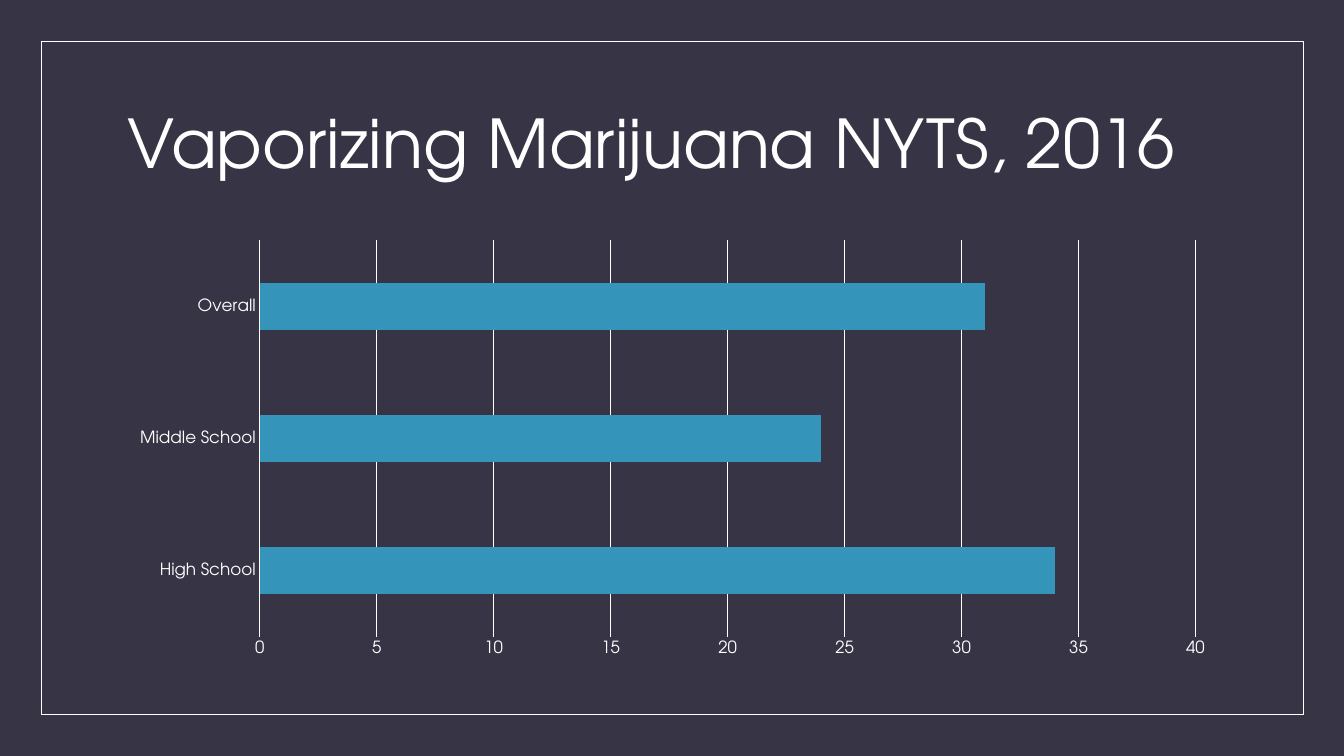
from pptx import Presentation
from pptx.chart import data
from pptx.dml import color
from pptx.enum import chart as chart_enum, shapes, text
from pptx.util import Inches, Pt

FONT = "TeX Gyre Adventor"
WHITE, BACKGROUND, BAR = "FFFFFF", "373545", "3494BA"


def rgb(value):
    return color.RGBColor.from_string(value)


def style_font(font, size):
    font.name = FONT
    font.size = Pt(size)
    font.bold = False
    font.color.rgb = rgb(WHITE)


def style_line(line, width):
    line.color.rgb = rgb(WHITE)
    line.width = Pt(width)


def add_frame(slide, left, top, width, height):
    frame = slide.shapes.add_shape(shapes.MSO_SHAPE.RECTANGLE, left, top, width, height)
    frame.shadow.inherit = False
    frame.fill.background()
    style_line(frame.line, 0.5)


def add_title(slide, left, top, width, height):
    text_frame = slide.shapes.add_textbox(left, top, width, height).text_frame
    text_frame.word_wrap = True
    text_frame.vertical_anchor = text.MSO_ANCHOR.MIDDLE
    paragraph = text_frame.paragraphs[0]
    paragraph.line_spacing = 0.9
    run = paragraph.add_run()
    run.text = "Vaporizing Marijuana NYTS, 2016"
    style_font(run.font, 48)


def add_bar_chart(slide, left, top, width, height):
    chart_data = data.CategoryChartData()
    chart_data.categories = ["High School", "Middle School", "Overall"]
    chart_data.add_series("Series 1", [34, 24, 31])
    chart = slide.shapes.add_chart(
        chart_enum.XL_CHART_TYPE.BAR_CLUSTERED, left, top, width, height, chart_data
    ).chart
    chart.has_legend = False
    chart.has_title = False
    style_font(chart.font, 10)

    # Bars
    plot = chart.plots[0]
    plot.gap_width = 182
    plot.vary_by_categories = False
    fill = plot.series[0].format.fill
    fill.solid()
    fill.fore_color.rgb = rgb(BAR)

    # Axes
    for axis in (chart.category_axis, chart.value_axis):
        axis.major_tick_mark = chart_enum.XL_TICK_MARK.NONE
        axis.minor_tick_mark = chart_enum.XL_TICK_MARK.NONE
        style_font(axis.tick_labels.font, 12)
    style_line(chart.category_axis.format.line, 0.75)
    values = chart.value_axis
    values.minimum_scale, values.maximum_scale, values.major_unit = 0, 40, 5
    values.format.line.fill.background()
    values.has_major_gridlines = True
    style_line(values.major_gridlines.format.line, 0.75)


def build_chart_slide(presentation):
    slide = presentation.slides.add_slide(presentation.slide_layouts[6])
    slide.background.fill.solid()
    slide.background.fill.fore_color.rgb = rgb(BACKGROUND)

    # Border
    margin = Inches(0.41)
    add_frame(slide, margin, margin, Inches(12.52), Inches(6.68))

    # Title and chart share one column
    left, width = Inches(1.17), Inches(11)
    add_title(slide, left, Inches(0.71), width, Inches(1.5))
    add_bar_chart(slide, left, Inches(2.3), width, Inches(4.3))


def main():
    presentation = Presentation()
    presentation.slide_width = Inches(13.33)
    presentation.slide_height = Inches(7.5)
    build_chart_slide(presentation)
    presentation.save("out.pptx")


if __name__ == "__main__":
    main()
